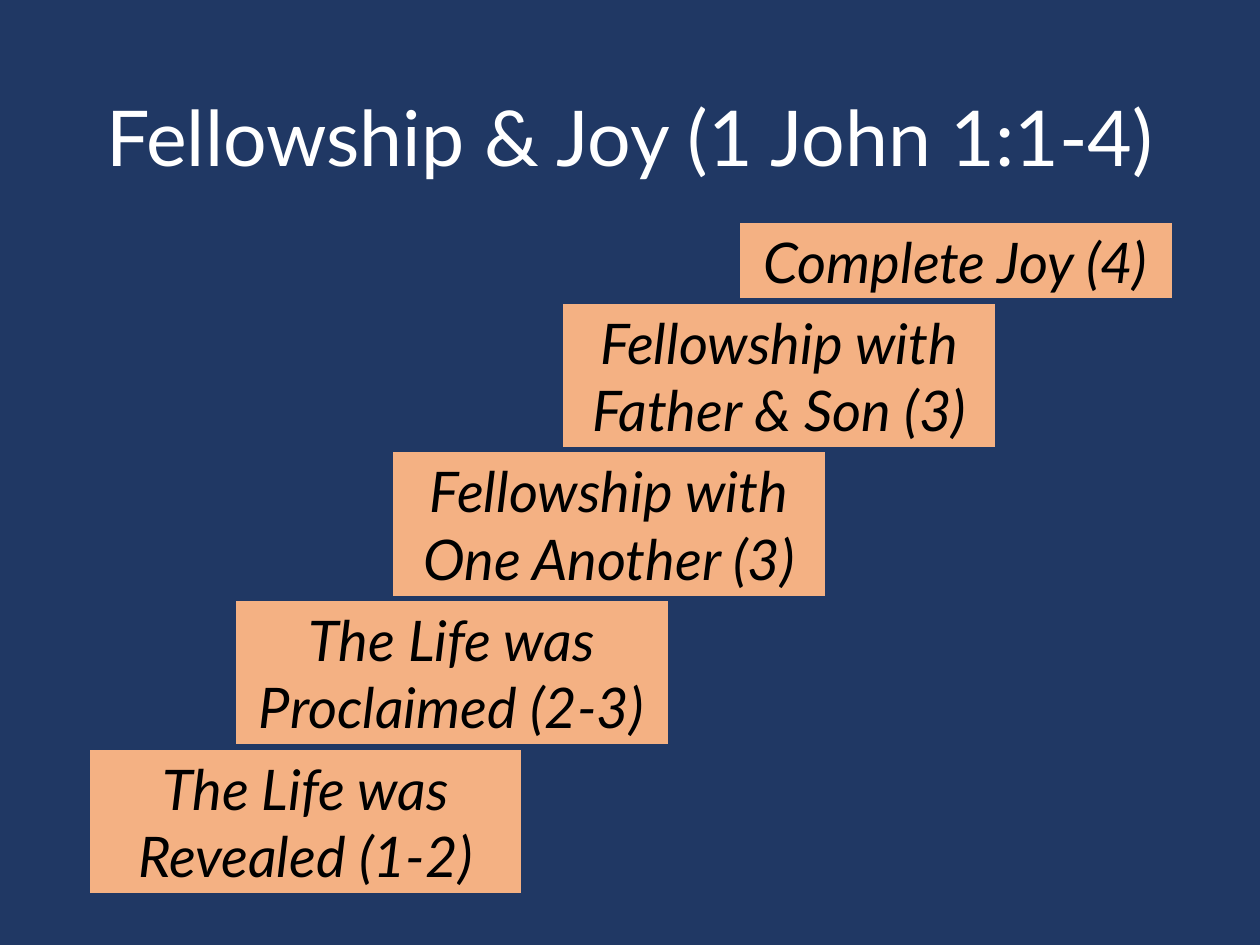
import dataclasses

import pptx
import pptx.dml.color
import pptx.enum.shapes
import pptx.enum.text
import pptx.util


@dataclasses.dataclass(frozen=True)
class Theme:
    """Colours, font and type sizes of the slide."""
    background: str = "203864"
    step_fill: str = "F4B183"
    title_color: str = "FFFFFF"
    step_color: str = "000000"
    font: str = "Lato"
    title_size: int = 44
    step_size: int = 32
    border: int = 3


THEME = Theme()
WIDTH, HEIGHT = 10, 7.5
MARGIN = 0.69
STEP_WIDTH = 3.47
ONE_LINE, TWO_LINES = 0.64, 1.18
STAIR_BOTTOM = 7.11
STEPS = [
    ("The Life was Revealed (1-2)", MARGIN, TWO_LINES),
    ("The Life was Proclaimed (2-3)", 1.85, TWO_LINES),
    ("Fellowship with One Another (3)", 3.1, TWO_LINES),
    ("Fellowship with Father & Son (3)", 4.45, TWO_LINES),
    ("Complete Joy (4)", 5.85, ONE_LINE),
]


def rgb(value):
    """Return a colour from its hex string."""
    return pptx.dml.color.RGBColor.from_string(value)


def box(left, top, width, height):
    """Return a position and size in inches as lengths."""
    return [pptx.util.Inches(v) for v in (left, top, width, height)]


def write(sp, text, size, color, italic=False):
    """Put one centred paragraph in a shape and return it."""
    tf = sp.text_frame
    tf.word_wrap = True
    tf.vertical_anchor = pptx.enum.text.MSO_ANCHOR.MIDDLE
    p = tf.paragraphs[0]
    p.text = text
    p.alignment = pptx.enum.text.PP_ALIGN.CENTER
    p.font.name = THEME.font
    p.font.size = pptx.util.Pt(size)
    p.font.color.rgb = rgb(color)
    p.font.italic = italic
    return p


def add_title(s, text):
    """Add the slide heading."""
    sp = s.shapes.add_textbox(*box(MARGIN, 0.4, WIDTH - 2 * MARGIN, 1.45))
    p = write(sp, text, THEME.title_size, THEME.title_color)
    p.line_spacing = 0.9


def add_step(s, text, left, top, height):
    """Add one step of the staircase."""
    sp = s.shapes.add_shape(pptx.enum.shapes.MSO_SHAPE.RECTANGLE,
                            *box(left, top, STEP_WIDTH, height))
    sp.shadow.inherit = False
    sp.fill.solid()
    sp.fill.fore_color.rgb = rgb(THEME.step_fill)
    sp.line.color.rgb = rgb(THEME.background)
    sp.line.width = pptx.util.Pt(THEME.border)
    write(sp, text, THEME.step_size, THEME.step_color, italic=True)
    sp.text_frame.auto_size = pptx.enum.text.MSO_AUTO_SIZE.SHAPE_TO_FIT_TEXT


def add_staircase(s):
    """Stack the steps upward from the bottom left."""
    top = STAIR_BOTTOM
    for text, left, height in STEPS:
        top -= height
        add_step(s, text, left, top, height)


def main():
    """Build and save the slide."""
    prs = pptx.Presentation()
    prs.slide_width = pptx.util.Inches(WIDTH)
    prs.slide_height = pptx.util.Inches(HEIGHT)
    s = prs.slides.add_slide(prs.slide_layouts[6])
    s.background.fill.solid()
    s.background.fill.fore_color.rgb = rgb(THEME.background)
    add_title(s, "Fellowship & Joy (1 John 1:1-4)")
    add_staircase(s)
    prs.save("out.pptx")


if __name__ == "__main__":
    main()
